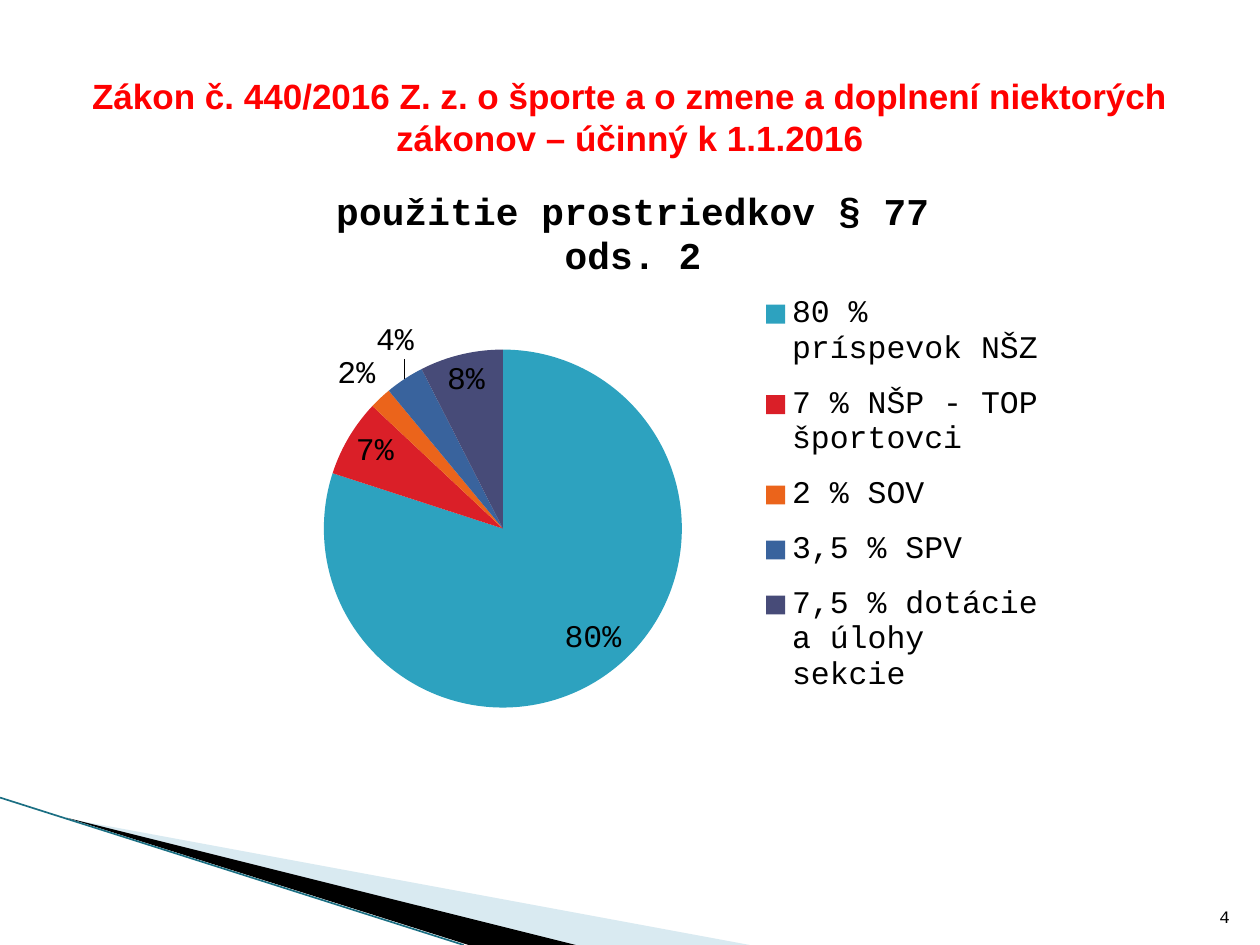
from dataclasses import dataclass

from pptx import Presentation
from pptx.chart.data import CategoryChartData
from pptx.dml.color import RGBColor
from pptx.enum.chart import XL_CHART_TYPE, XL_LABEL_POSITION, XL_LEGEND_POSITION
from pptx.enum.shapes import MSO_CONNECTOR
from pptx.enum.text import MSO_ANCHOR, PP_ALIGN
from pptx.oxml import parse_xml
from pptx.oxml.ns import nsdecls, qn
from pptx.oxml.xmlchemy import OxmlElement
from pptx.util import Inches, Pt


@dataclass(frozen=True)
class Theme:
    title_font: str = "Arial"
    body_font: str = "Courier New"
    red: str = "FF0000"
    black: str = "000000"
    pale_blue: str = "A0CBDC"
    teal: str = "1B6F83"
    slices: tuple = ("2DA2BF", "DA1F28", "EB641B", "39639D", "474B78")
    title_size: float = 20
    chart_title_size: float = 21.6
    chart_size: float = 18
    number_size: float = 10


THEME = Theme()
CHART_TITLE = "použitie prostriedkov § 77 ods. 2"
SHARES = {
    "80 % príspevok NŠZ": 0.8,
    "7 % NŠP - TOP športovci": 0.07,
    "2 % SOV": 0.02,
    "3,5 % SPV": 0.035,
    "7,5 % dotácie a úlohy sekcie": 0.075,
}


def style_font(font, name, size, color, bold=False):
    font.name = name
    font.size = Pt(size)
    font.bold = bold
    font.color.rgb = RGBColor.from_string(color)


def add_wedge(slide, points, color, alpha=None):
    """Draw a filled polygon; alpha is its opacity in percent."""
    corners = [(Inches(x), Inches(y)) for x, y in points]
    builder = slide.shapes.build_freeform(*corners[0], scale=1.0)
    builder.add_line_segments(corners[1:], close=True)
    wedge = builder.convert_to_shape()
    wedge.shadow.inherit = False
    wedge.line.fill.background()
    wedge.fill.solid()
    wedge.fill.fore_color.rgb = RGBColor.from_string(color)
    if alpha is not None:
        opacity = OxmlElement("a:alpha")
        opacity.set("val", str(alpha * 1000))
        wedge._element.spPr.find(".//" + qn("a:srgbClr")).append(opacity)


def add_edge_line(slide, start, end):
    ends = [Inches(value) for value in (*start, *end)]
    edge = slide.shapes.add_connector(MSO_CONNECTOR.STRAIGHT, *ends)
    edge.line.color.rgb = RGBColor.from_string(THEME.teal)
    edge.line.width = Pt(0.95)
    edge._element.spPr.append(OxmlElement("a:effectLst"))


def set_title(slide, text):
    title = slide.shapes.title
    title.left, title.top = Inches(0.5), Inches(0.3)
    title.width, title.height = Inches(9), Inches(1.25)
    title.text_frame.text = text
    title.text_frame.vertical_anchor = MSO_ANCHOR.MIDDLE
    para = title.text_frame.paragraphs[0]
    para.alignment = PP_ALIGN.CENTER
    style_font(para.runs[0].font, THEME.title_font, THEME.title_size, THEME.red, True)


def manual_layout(left, top, width, height, inner=False):
    """Make a chart layout from fractions of the chart's size."""
    target = '<c:layoutTarget val="inner"/>' if inner else ""
    return parse_xml(
        f'<c:layout {nsdecls("c")}><c:manualLayout>{target}'
        '<c:xMode val="edge"/><c:yMode val="edge"/>'
        f'<c:x val="{left}"/><c:y val="{top}"/><c:w val="{width}"/><c:h val="{height}"/>'
        "</c:manualLayout></c:layout>"
    )


def add_pie(slide):
    data = CategoryChartData(number_format="0%")
    data.categories = list(SHARES)
    data.add_series(CHART_TITLE, list(SHARES.values()))
    chart = slide.shapes.add_chart(
        XL_CHART_TYPE.PIE, Inches(1.69), Inches(1.31), Inches(6.67), Inches(4.44), data
    ).chart
    style_font(chart.font, THEME.body_font, THEME.chart_size, THEME.black)

    chart.has_title = True
    chart.chart_title.text_frame.text = CHART_TITLE
    span = chart.chart_title.text_frame.paragraphs[0].runs[0]
    style_font(span.font, THEME.body_font, THEME.chart_title_size, THEME.black, True)

    chart.has_legend = True
    chart.legend.position = XL_LEGEND_POSITION.RIGHT
    chart.legend.include_in_layout = False
    style_font(chart.legend.font, THEME.body_font, THEME.chart_size, THEME.black)
    legend = chart.legend._element
    for layout in legend.findall(qn("c:layout")):
        legend.remove(layout)
    legend.find(qn("c:legendPos")).addnext(manual_layout(0.65, 0.2, 0.34, 0.78))

    plot_area = chart._chartSpace.chart.plotArea
    for layout in plot_area.findall(qn("c:layout")):
        plot_area.remove(layout)
    plot_area.insert(0, manual_layout(0.13, 0.33, 0.43, 0.64, inner=True))

    plot = chart.plots[0]
    plot.vary_by_categories = True
    series = plot.series[0]
    for index, color in enumerate(THEME.slices):
        fill = series.points[index].format.fill
        fill.solid()
        fill.fore_color.rgb = RGBColor.from_string(color)
    labels = series.data_labels
    labels.show_value = True
    labels.number_format = "0%"
    labels.number_format_is_linked = False
    labels.position = XL_LABEL_POSITION.BEST_FIT
    style_font(labels.font, THEME.body_font, THEME.chart_size, THEME.black)


def add_page_number(slide, number):
    box = slide.shapes.add_textbox(Inches(9.46), Inches(7.01), Inches(0.4), Inches(0.4))
    frame = box.text_frame
    frame.word_wrap = True
    frame.vertical_anchor = MSO_ANCHOR.BOTTOM
    frame.text = number
    para = frame.paragraphs[0]
    para.alignment = PP_ALIGN.RIGHT
    style_font(para.runs[0].font, THEME.body_font, THEME.number_size, THEME.black)


def main():
    deck = Presentation()
    deck.slide_width, deck.slide_height = Inches(10), Inches(7.5)
    slide = deck.slides.add_slide(deck.slide_layouts[5])
    add_wedge(slide, [(0.55, 6.5), (5.95, 7.5), (4.56, 7.5)], THEME.pale_blue, alpha=40)
    add_wedge(slide, [(0.53, 6.49), (4.57, 7.5), (3.72, 7.5)], THEME.black)
    add_edge_line(slide, (0, 6.33), (3.68, 7.5))
    set_title(
        slide,
        "Zákon č. 440/2016 Z. z. o športe a o zmene a doplnení niektorých "
        "zákonov – účinný k 1.1.2016",
    )
    add_pie(slide)
    add_page_number(slide, "4")
    deck.save("out.pptx")


if __name__ == "__main__":
    main()
